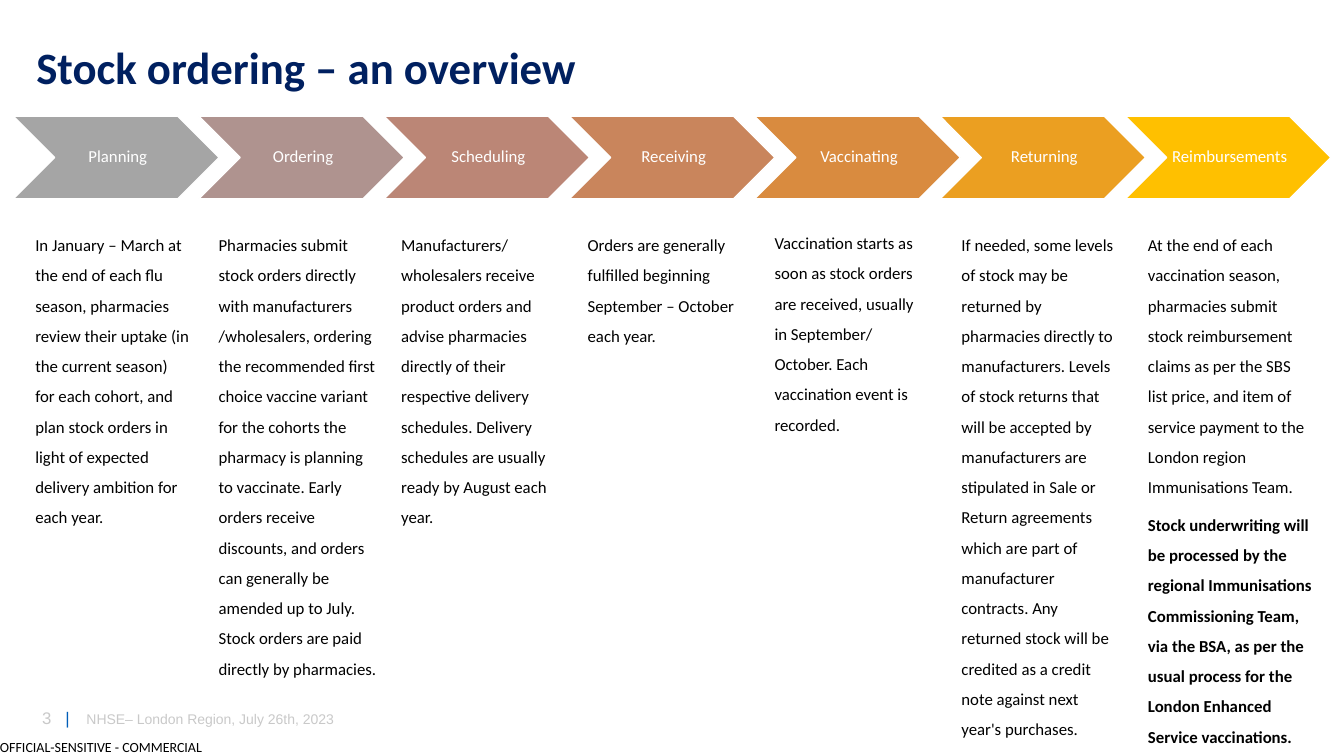
from lxml import etree
from pptx import Presentation
from pptx import util as u
from pptx.dml.color import RGBColor
from pptx.enum import shapes, text
from pptx.oxml.ns import qn

STAGES = [
    # label, chevron colour, column left, top, width, paragraphs
    ("Planning", "A5A5A5", 0.64, 5.54, 4.39, [
        "In January – March at the end of each flu season, pharmacies review their "
        "uptake (in the current season) for each cohort, and plan stock orders in "
        "light of expected delivery ambition for each year."]),
    ("Ordering", "AF938F", 5.26, 5.54, 4.6, [
        "Pharmacies submit stock orders directly with manufacturers /wholesalers, "
        "ordering the recommended first choice vaccine variant for the cohorts the "
        "pharmacy is planning to vaccinate. Early orders receive discounts, and "
        "orders can generally be amended up to July. Stock orders are paid directly "
        "by pharmacies."]),
    ("Scheduling", "BB8676", 9.86, 5.54, 4.39, [
        "Manufacturers/ wholesalers receive product orders and advise pharmacies "
        "directly of their respective delivery schedules. Delivery schedules are "
        "usually ready by August each year."]),
    ("Receiving", "C9855C", 14.56, 5.54, 4.39, [
        "Orders are generally fulfilled beginning September – October each year."]),
    ("Vaccinating", "D98B3F", 19.27, 5.49, 4.39, [
        "Vaccination starts as soon as stock orders are received, usually in "
        "September/ October. Each vaccination event is recorded."]),
    ("Returning", "EB9F21", 23.98, 5.54, 4.39, [
        "If needed, some levels of stock may be returned by pharmacies directly to "
        "manufacturers. Levels of stock returns that will be accepted by "
        "manufacturers are stipulated in Sale or Return agreements which are part of "
        "manufacturer contracts. Any returned stock will be credited as a credit "
        "note against next year's purchases."]),
    ("Reimbursements", "FFC000", 28.68, 5.54, 4.67, [
        "At the end of each vaccination season, pharmacies submit stock "
        "reimbursement claims as per the SBS list price, and item of service payment "
        "to the London region Immunisations Team.",
        "Stock underwriting will be processed by the regional Immunisations "
        "Commissioning Team, via the BSA, as per the usual process for the London "
        "Enhanced Service vaccinations."]),
]


def rgb(value):
    return RGBColor.from_string(value)


class Deck:
    """Holds the fonts, the colours and the current slide."""
    BODY, FOOT = "Calibri", "Arial"
    NAVY, BLUE, GREY, WHITE, BLACK = "002060", "005EB8", "C9C9C9", "FFFFFF", "000000"

    def __init__(self):
        self.prs = Presentation()
        self.prs.slide_width, self.prs.slide_height = u.Cm(33.87), u.Cm(19.05)
        self.s = self.prs.slides.add_slide(self.prs.slide_layouts[5])

    def font(self, item, size, color, name=BODY, bold=False):
        f = item.font
        f.size, f.name, f.bold = u.Pt(size), name, bold
        f.color.rgb = rgb(color)

    def title(self, words, left, top, width, height):
        sp = self.s.shapes.title
        sp.left, sp.top, sp.width, sp.height = map(u.Cm, (left, top, width, height))
        tf = sp.text_frame
        tf.text = words
        tf.vertical_anchor = text.MSO_ANCHOR.MIDDLE
        p = tf.paragraphs[0]
        p.alignment, p.line_spacing = text.PP_ALIGN.LEFT, 0.9
        self.font(p.runs[0], 32, self.NAVY, bold=True)

    def chevron(self, label, color, left, top, width, height):
        sp = self.s.shapes.add_shape(shapes.MSO_SHAPE.CHEVRON,
                                     *map(u.Cm, (left, top, width, height)))
        sp.shadow.inherit = False
        sp.fill.solid()
        sp.fill.fore_color.rgb = rgb(color)
        sp.line.color.rgb = rgb(self.WHITE)
        sp.line.width = u.Pt(1)
        tf = sp.text_frame
        tf.text = label
        tf.word_wrap = False
        tf.vertical_anchor = text.MSO_ANCHOR.MIDDLE
        tf.margin_left = u.Cm(0.13)
        tf.margin_right = tf.margin_top = tf.margin_bottom = u.Cm(0.05)
        p = tf.paragraphs[0]
        p.alignment, p.line_spacing = text.PP_ALIGN.CENTER, 0.9
        self.font(p.runs[0], 12, self.WHITE)

    def text_box(self, words, left, top, width, height):
        tf = self.s.shapes.add_textbox(*map(u.Cm, (left, top, width, height))).text_frame
        tf.word_wrap = True
        tf.text = words
        return tf

    def column(self, paragraphs, left, top, width, height):
        """Body text; every paragraph after the first is bold."""
        tf = self.text_box("\n".join(paragraphs), left, top, width, height)
        for i, p in enumerate(tf.paragraphs):
            p.line_spacing = 1.5
            if i:
                p.space_before = u.Pt(5.4)
            self.font(p.runs[0], 12, self.BLACK, bold=i > 0)

    def footer(self, words):
        tf = self.text_box(words, 1.93, 17.6, 15.9, 1.02)
        tf.vertical_anchor = text.MSO_ANCHOR.MIDDLE
        self.font(tf.paragraphs[0].runs[0], 10, self.GREY, self.FOOT)

    def page_number(self, number):
        p = self.text_box(f"{number}\t", 0.81, 17.7, 1.8, 0.76).paragraphs[0]
        tabs = etree.SubElement(p._p.get_or_add_pPr(), qn("a:tabLst"))
        etree.SubElement(tabs, qn("a:tab"), pos=str(u.Cm(0.59)), algn="l")
        self.font(p.runs[0], 12, self.GREY, self.FOOT)
        r = p.add_run()
        r.text = "|"
        self.font(r, 12, self.BLUE, self.FOOT)

    def marking(self, words):
        tf = self.text_box(words, 0, 18.62, 5.18, 0.43)
        tf.margin_left = tf.margin_right = tf.margin_top = tf.margin_bottom = 0
        self.font(tf.paragraphs[0].runs[0], 10, self.BLACK)


def main():
    deck = Deck()
    deck.marking("OFFICIAL-SENSITIVE - COMMERCIAL")
    deck.page_number(3)
    deck.title("Stock ordering – an overview", 0.66, 0.84, 28.47, 1.83)
    for i, (label, color, *_) in enumerate(STAGES):
        deck.chevron(label, color, 0.34 + i * 4.67, 2.93, 5.18, 2.08)
    for _, _, left, top, width, paragraphs in STAGES:
        deck.column(paragraphs, left, top, width, 13.2 if width > 4.6 else 10.9)
    deck.footer("NHSE– London Region, July 26th, 2023")
    deck.prs.save("out.pptx")


if __name__ == "__main__":
    main()
